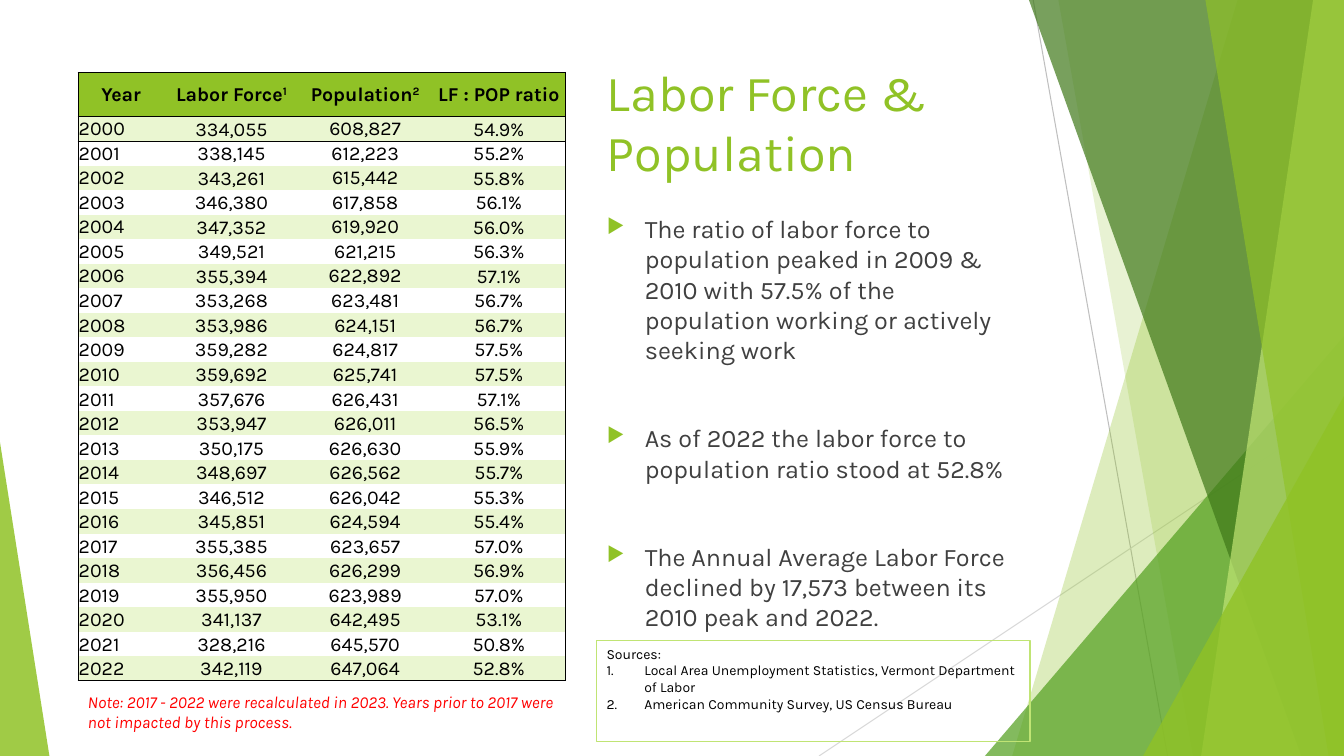
import pptx
import pptx.dml.color
import pptx.enum.shapes
import pptx.enum.text
import pptx.oxml
import pptx.oxml.ns
import pptx.util

Pt = pptx.util.Pt
qn = pptx.oxml.ns.qn
ALIGN = pptx.enum.text.PP_ALIGN
ANCHOR = pptx.enum.text.MSO_ANCHOR
SHAPE = pptx.enum.shapes.MSO_SHAPE

WIDTH, HEIGHT = 960, 540
FONT = "Karla"
NO_TABLE_STYLE = "{2D5ABB26-0587-4C30-8999-92F81FD0307C}"
COLORS = {
    "green": "90C226", "leaf": "54A021", "forest": "3F7819",
    "lime": "C0E474", "band": "EAF6D1", "white": "FFFFFF",
    "black": "000000", "body": "404040", "red": "FF0000",
    "line_dark": "BFBFBF", "line_light": "D9D9D9",
}

# Each header is a label and its footnote mark
HEADERS = [("Year", ""), ("Labor Force", "1"), ("Population", "2"), ("LF : POP ratio", "")]
FIRST_YEAR = 2000
# Labor force, population and ratio, one year a row
FIGURES = [
    ("334,055", "608,827", "54.9%"),
    ("338,145", "612,223", "55.2%"),
    ("343,261", "615,442", "55.8%"),
    ("346,380", "617,858", "56.1%"),
    ("347,352", "619,920", "56.0%"),
    ("349,521", "621,215", "56.3%"),
    ("355,394", "622,892", "57.1%"),
    ("353,268", "623,481", "56.7%"),
    ("353,986", "624,151", "56.7%"),
    ("359,282", "624,817", "57.5%"),
    ("359,692", "625,741", "57.5%"),
    ("357,676", "626,431", "57.1%"),
    ("353,947", "626,011", "56.5%"),
    ("350,175", "626,630", "55.9%"),
    ("348,697", "626,562", "55.7%"),
    ("346,512", "626,042", "55.3%"),
    ("345,851", "624,594", "55.4%"),
    ("355,385", "623,657", "57.0%"),
    ("356,456", "626,299", "56.9%"),
    ("355,950", "623,989", "57.0%"),
    ("341,137", "642,495", "53.1%"),
    ("328,216", "645,570", "50.8%"),
    ("342,119", "647,064", "52.8%"),
]
FINDINGS = [
    "The ratio of labor force to population peaked in 2009 & 2010 with 57.5% "
    "of the population working or actively seeking work",
    "As of 2022 the labor force to population ratio stood at 52.8%",
    "The Annual Average Labor Force declined by 17,573 between its 2010 peak and 2022.",
]
SOURCES = [
    "Sources:",
    "Local Area Unemployment Statistics, Vermont Department of Labor",
    "American Community Survey, US Census Bureau",
]
NOTE = ("Note: 2017 - 2022 were recalculated in 2023. Years prior to 2017 "
        "were not impacted by this process.")


def rgb(name):
    return pptx.dml.color.RGBColor.from_string(COLORS[name])


def add_xml(parent, xml):
    ns = pptx.oxml.ns.nsdecls("a")
    parent.append(pptx.oxml.parse_xml(xml.replace(">", f" {ns}>", 1) if "/>" not in xml.split(">")[0] + ">"
                                      else xml.replace("/>", f" {ns}/>", 1)))


def format_run(r, size, color, bold=False, italic=False):
    r.font.name, r.font.size = FONT, Pt(size)
    r.font.bold, r.font.italic = bold, italic
    r.font.color.rgb = rgb(color)


def add_line(s, x1, y1, x2, y2, color):
    line = s.shapes.add_connector(pptx.enum.shapes.MSO_CONNECTOR.STRAIGHT, Pt(x1), Pt(y1), Pt(x2), Pt(y2))
    line.line.color.rgb = rgb(color)
    line.line.width = Pt(0.75)
    add_xml(line._element.spPr, "<a:effectLst/>")


def fill_clear(sp, color, opacity):
    sp.shadow.inherit = False
    sp.line.fill.background()
    sp.fill.solid()
    sp.fill.fore_color.rgb = rgb(color)
    srgb = sp._element.spPr.find(qn("a:solidFill")).find(qn("a:srgbClr"))
    add_xml(srgb, f'<a:alpha val="{opacity * 1000}"/>')


def add_band(s, top_x, edge_x, bottom_x, color, opacity):
    """Full-height band between a slanted left side and the slide's right edge."""
    corners = [(edge_x, 0), (edge_x, HEIGHT), (bottom_x, HEIGHT)]
    builder = s.shapes.build_freeform(Pt(top_x), 0)
    builder.add_line_segments([(Pt(x), Pt(y)) for x, y in corners], close=True)
    fill_clear(builder.convert_to_shape(), color, opacity)


def add_triangle(s, left, top, width, apex, color, opacity):
    sp = s.shapes.add_shape(SHAPE.ISOSCELES_TRIANGLE, Pt(left), Pt(top), Pt(width), Pt(HEIGHT - top))
    sp.adjustments[0] = apex
    fill_clear(sp, color, opacity)


def add_text(s, left, top, width, height, lines, size, color, italic=False):
    sp = s.shapes.add_textbox(Pt(left), Pt(top), Pt(width), Pt(height))
    tf = sp.text_frame
    tf.word_wrap = True
    tf.text = "\n".join(lines)
    for p in tf.paragraphs:
        format_run(p.runs[0], size, color, italic=italic)
    return sp


def hang_bullet(p, *bullet_xml):
    pPr = p._p.get_or_add_pPr()
    pPr.set("marL", str(Pt(27)))
    pPr.set("indent", str(-Pt(27)))
    for xml in bullet_xml:
        add_xml(pPr, xml)


def add_border(cell, side):
    add_xml(cell._tc.get_or_add_tcPr(),
            f'<a:ln{side} w="{Pt(0.5)}"><a:solidFill><a:srgbClr val="{COLORS["black"]}"/>'
            f'</a:solidFill></a:ln{side}>')


def fill_cell(cell, text, mark, sides, fill, bold, align, anchor):
    for side in sides:
        add_border(cell, side)
    cell.fill.solid()
    cell.fill.fore_color.rgb = rgb(fill)
    cell.margin_left = cell.margin_right = cell.margin_top = Pt(0.6)
    cell.margin_bottom = 0
    cell.vertical_anchor = anchor
    p = cell.text_frame.paragraphs[0]
    p.text = text
    p.alignment = align
    if mark:
        r = p.add_run()
        r.text = mark
        r._r.get_or_add_rPr().set("baseline", "30000")
    for r in p.runs:
        format_run(r, 14, "black", bold=bold)


def add_labor_table(s):
    years = [((str(FIRST_YEAR + i), ""), *((value, "") for value in row)) for i, row in enumerate(FIGURES)]
    rows = [HEADERS] + years
    widths = [62] + [95.5] * 3
    heights = [31.7] + [17.53] * len(years)
    frame = s.shapes.add_table(len(rows), len(widths), Pt(55.6), Pt(51.6), Pt(sum(widths)), Pt(sum(heights)))
    table = frame.table
    table._tbl.tblPr.find(qn("a:tableStyleId")).text = NO_TABLE_STYLE
    for column, width in zip(table.columns, widths):
        column.width = Pt(width)
    last_row, last_col = len(rows) - 1, len(widths) - 1
    for i, row in enumerate(rows):
        table.rows[i].height = Pt(heights[i])
        header, shaded = i == 0, i % 2 == 1
        fill = "green" if header else "band" if shaded else "white"
        for j, (text, mark) in enumerate(row):
            edges = {"L": j == 0, "R": j == last_col, "T": i < 2, "B": i in (0, last_row)}
            sides = [side for side, drawn in edges.items() if drawn]
            align = ALIGN.LEFT if j == 0 and not header else ALIGN.CENTER
            middle = header or (shaded and j % 2 == 0)
            fill_cell(table.cell(i, j), text, mark, sides, fill, header, align,
                      ANCHOR.MIDDLE if middle else ANCHOR.BOTTOM)


def add_backdrop(s):
    add_line(s, 738, 0, 834, HEIGHT, "line_dark")
    add_line(s, WIDTH, 290, 585, HEIGHT, "line_light")
    add_band(s, 884, WIDTH, 723, "green", 30)
    add_band(s, 756, WIDTH, 852, "green", 20)
    add_triangle(s, 703.5, 240, 256.5, 1, "leaf", 72)
    add_band(s, 735, WIDTH, 929.5, "forest", 70)
    add_band(s, 938, WIDTH, 858, "lime", 70)
    add_band(s, 861, WIDTH, 949, "green", 65)
    add_triangle(s, 816.5, 283, 143.5, 1, "green", 80)
    add_triangle(s, 0, 316, 35.3, 0, "green", 85)


def main():
    prs = pptx.Presentation()
    prs.slide_width, prs.slide_height = Pt(WIDTH), Pt(HEIGHT)
    s = prs.slides.add_slide(prs.slide_layouts[6])
    add_backdrop(s)

    # Title and findings
    title = add_text(s, 426.5, 34.5, 337.5, 104, ["Labor Force & Population"], 36, "green")
    title.text_frame.vertical_anchor = ANCHOR.MIDDLE
    findings = add_text(s, 426.5, 149, 304, 297, FINDINGS, 18, "body")
    for i, p in enumerate(findings.text_frame.paragraphs):
        p.space_before = Pt(41.4 if i else 10)
        hang_bullet(p, f'<a:buClr><a:srgbClr val="{COLORS["green"]}"/></a:buClr>',
                    '<a:buSzPct val="80000"/>', '<a:buChar char="▶"/>')

    # Sources and note
    sources = add_text(s, 426.2, 457.2, 309.6, 72.7, SOURCES, 10, "black")
    sources.line.color.rgb = rgb("lime")
    sources.line.width = Pt(0.75)
    for p in sources.text_frame.paragraphs[1:]:
        hang_bullet(p, '<a:buFont typeface="+mj-lt"/>', '<a:buAutoNum type="arabicPeriod"/>')
    add_text(s, 55.6, 490.5, 348.5, 36, [NOTE], 12, "red", italic=True)

    add_labor_table(s)
    prs.save("out.pptx")


if __name__ == "__main__":
    main()
